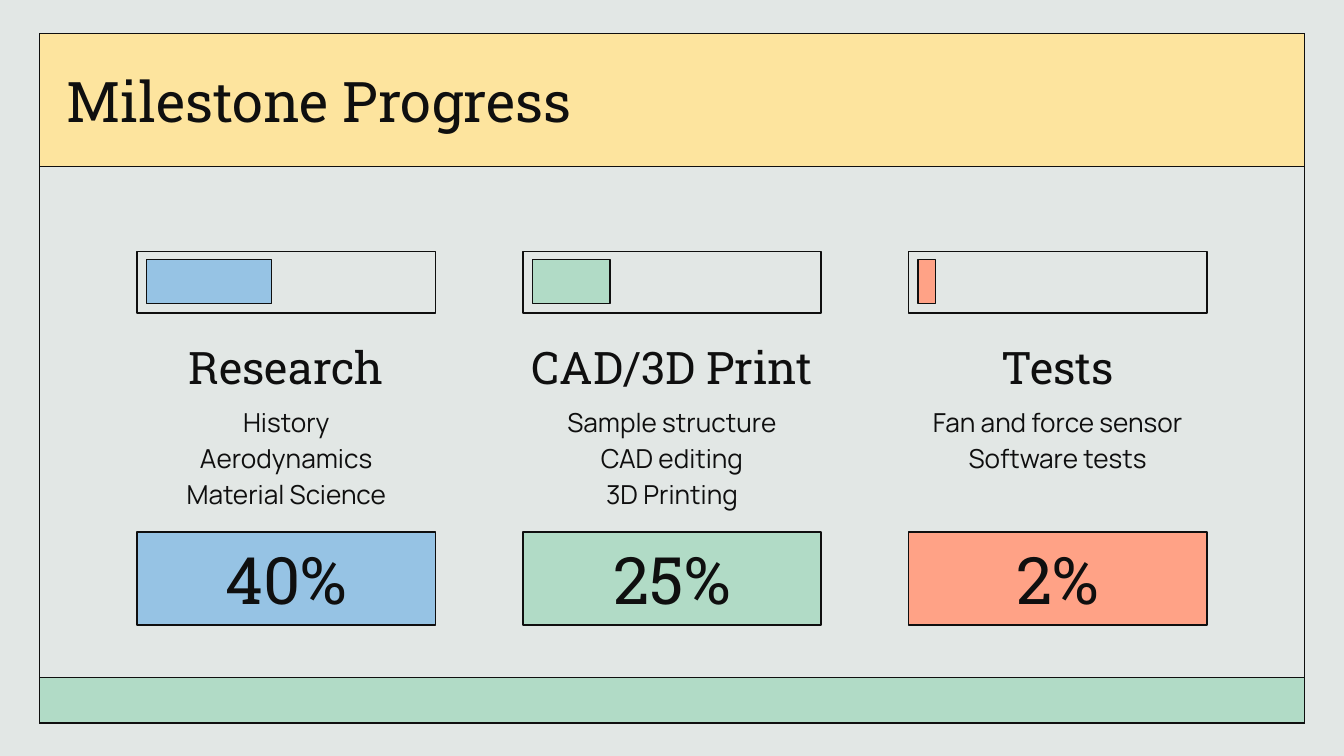
"""Build the milestone progress slide."""
from pptx import Presentation
from pptx.dml.color import RGBColor as Rgb
from pptx.enum.shapes import MSO_SHAPE as Kind
from pptx.enum.text import MSO_ANCHOR as Anchor, MSO_AUTO_SIZE as Fit, PP_ALIGN as Align
from pptx.util import Inches, Pt

COLORS = {"back": "E2E7E5", "ink": "0F0F0F", "gold": "FDE49E",
          "blue": "96C3E4", "green": "B1DBC6", "coral": "FFA286"}
HEAD, BODY = "Roboto Slab", "Manrope"
TITLE = "Milestone Progress"
STAGES = [
    {"name": "Research", "share": "40%", "color": "blue", "bar": 0.93,
     "tasks": ["History", "Aerodynamics", "Material Science"]},
    {"name": "CAD/3D Print", "share": "25%", "color": "green", "bar": 0.58,
     "tasks": ["Sample structure", "CAD editing", "3D Printing"]},
    {"name": "Tests", "share": "2%", "color": "coral", "bar": 0.13,
     "tasks": ["Fan and force sensor", "Software tests"]},
]
PAGE = 10
LEFT, WIDE, STEP, EXTRA = 1.02, 2.22, 2.87, 0.07
TOP, SPAN = 0.25, 9.41
EDGE = (PAGE - SPAN) / 2


def color(name):
    return Rgb.from_string(COLORS[name])


def paint(shape, fill=None):
    if fill:
        shape.fill.solid()
        shape.fill.fore_color.rgb = color(fill)
    else:
        shape.fill.background()
    shape.line.color.rgb = color("ink")
    shape.line.width = Pt(0.75)


def add_box(slide, x, y, w, h, fill=None):
    box = slide.shapes.add_shape(Kind.RECTANGLE, *map(Inches, (x, y, w, h)))
    box.shadow.inherit = False
    paint(box, fill)
    return box


def add_label(slide, x, y, w, h):
    return slide.shapes.add_textbox(*map(Inches, (x, y, w, h)))


def write(shape, text, size, font=HEAD, align=Align.CENTER,
          anchor=Anchor.MIDDLE, inset=0.1, lead=1):
    frame = shape.text_frame
    frame.text = text
    frame.word_wrap = True
    frame.auto_size = Fit.NONE
    frame.vertical_anchor = anchor
    frame.margin_left = Inches(inset)
    frame.margin_right = frame.margin_top = frame.margin_bottom = Inches(0.1)
    for para in frame.paragraphs:
        para.alignment = align
        para.line_spacing = lead
        for run in para.runs:
            run.font.name = font
            run.font.size = Pt(size)
            run.font.color.rgb = color("ink")


def add_stage(slide, x, stage):
    add_box(slide, x, 1.87, WIDE, 0.46)
    add_box(slide, x + 0.07, 1.93, stage["bar"], 0.33, stage["color"])
    tasks = add_label(slide, x, 2.89, WIDE, 0.93)
    write(tasks, "\n".join(stage["tasks"]), 14, BODY, anchor=Anchor.TOP, lead=1.15)
    name = add_label(slide, x - EXTRA, 2.51, WIDE + 2 * EXTRA, 0.52)
    write(name, stage["name"], 24, anchor=Anchor.BOTTOM)
    share = add_box(slide, x, 3.96, WIDE, 0.69, stage["color"])
    write(share, stage["share"], 35)


def main():
    deck = Presentation()
    deck.slide_width, deck.slide_height = Inches(PAGE), Inches(PAGE * 9 / 16)
    slide = deck.slides.add_slide(deck.slide_layouts[5])
    slide.background.fill.solid()
    slide.background.fill.fore_color.rgb = color("back")
    title = slide.shapes.title
    title.left, title.top = Inches(EDGE), Inches(TOP)
    title.width, title.height = Inches(SPAN), Inches(0.99)
    paint(title, "gold")
    write(title, TITLE, 30, align=Align.LEFT, inset=0.2)
    add_box(slide, EDGE, TOP, SPAN, 5.13)
    add_box(slide, EDGE, 5.04, SPAN, 0.34, "green")
    for col, stage in enumerate(STAGES):
        add_stage(slide, LEFT + col * STEP, stage)
    deck.save("out.pptx")


if __name__ == "__main__":
    main()
